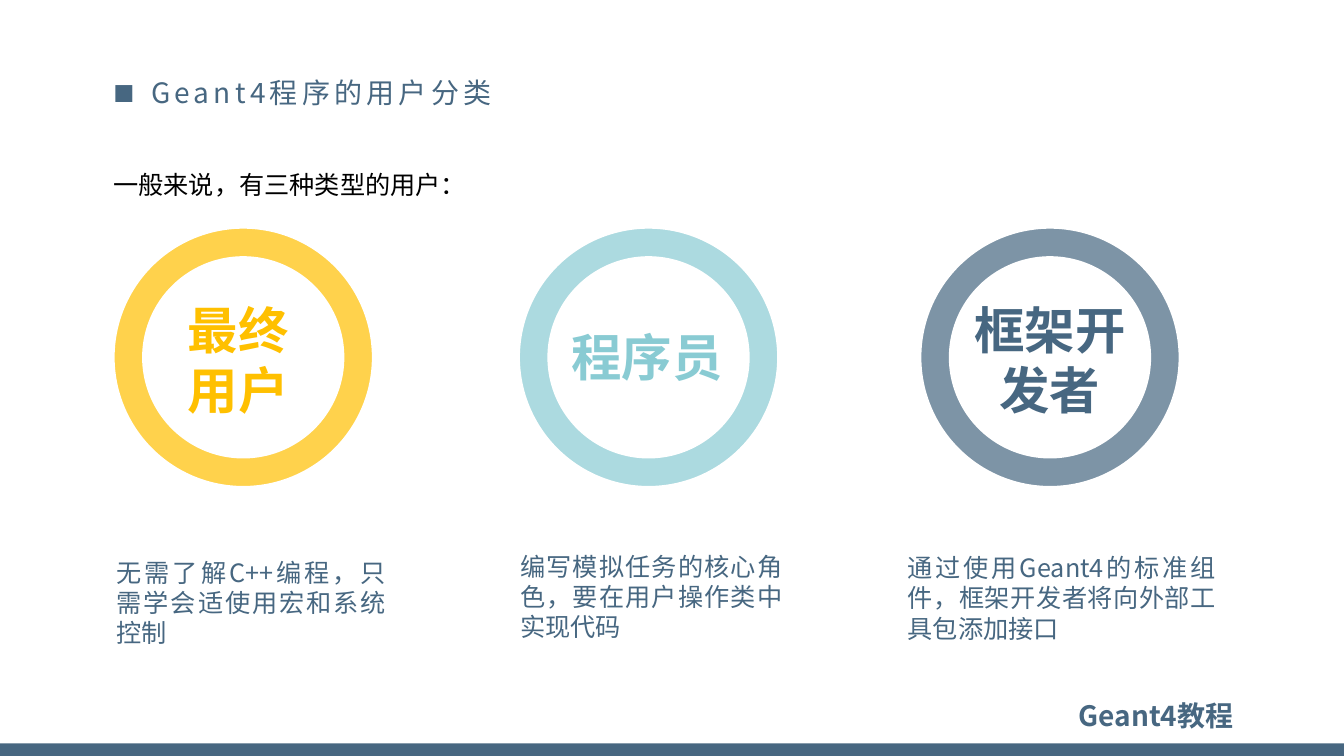
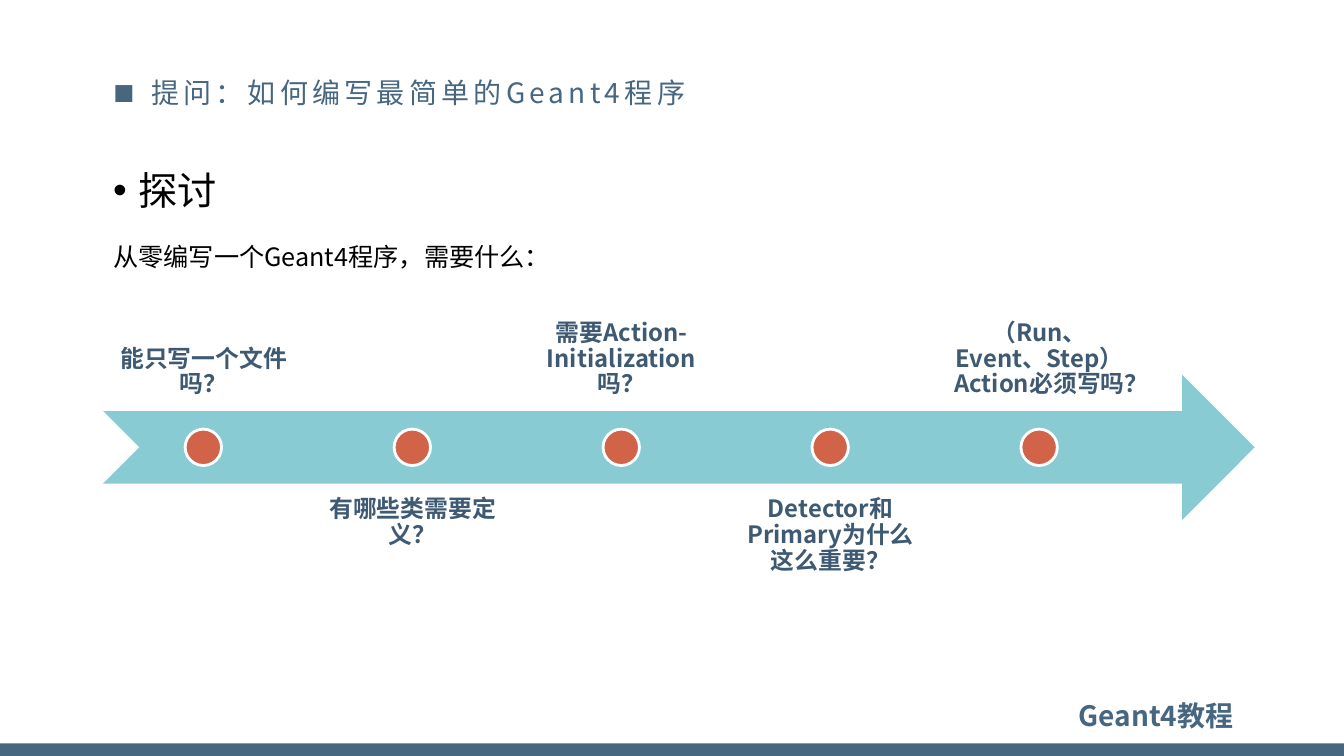
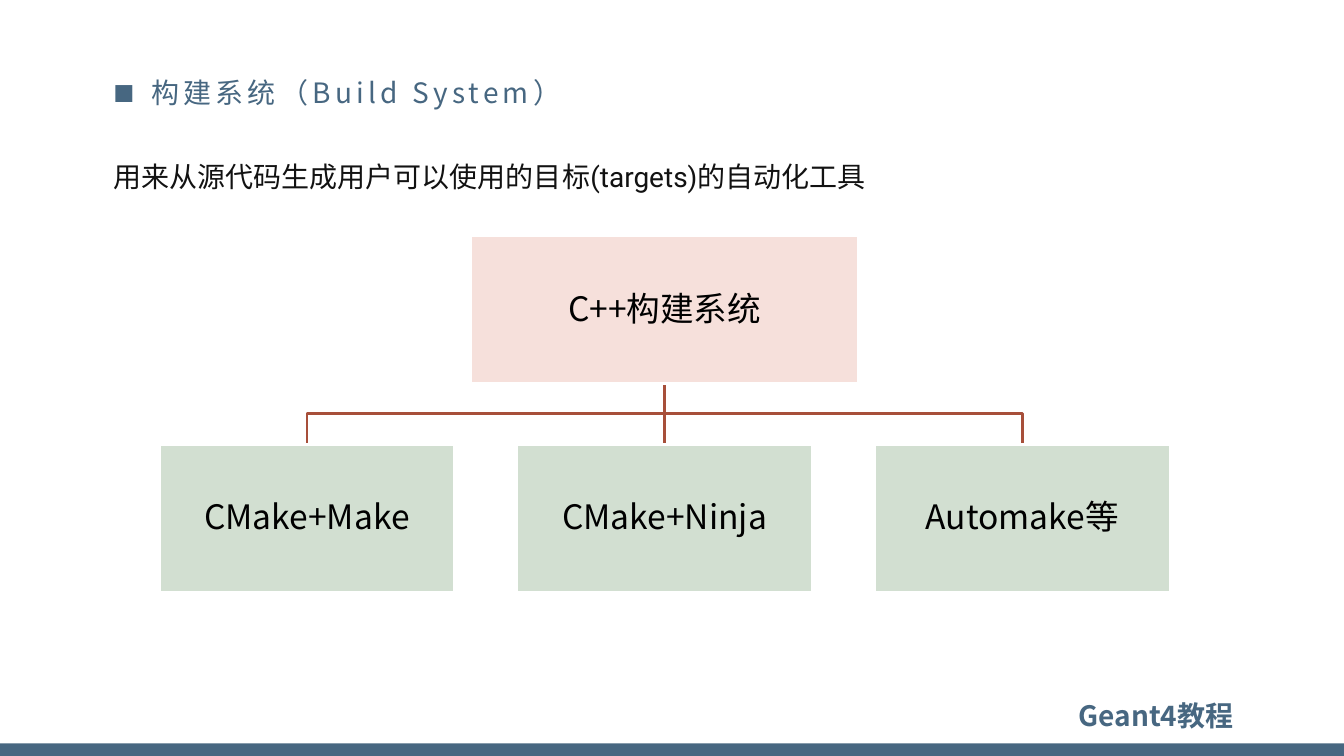
"""Build three slides of a Geant4 tutorial: user types, open questions, build systems."""
from lxml import etree
from pptx import Presentation
from pptx.dml.color import RGBColor
from pptx.enum.shapes import MSO_CONNECTOR, MSO_SHAPE
from pptx.enum.text import MSO_ANCHOR, MSO_AUTO_SIZE, PP_ALIGN
from pptx.oxml.ns import qn
from pptx.util import Pt

LEFT, CENTER, RIGHT, JUSTIFY = PP_ALIGN.LEFT, PP_ALIGN.CENTER, PP_ALIGN.RIGHT, PP_ALIGN.JUSTIFY
TOP, MIDDLE, BOTTOM = MSO_ANCHOR.TOP, MSO_ANCHOR.MIDDLE, MSO_ANCHOR.BOTTOM
RECTANGLE, OVAL, DONUT = MSO_SHAPE.RECTANGLE, MSO_SHAPE.OVAL, MSO_SHAPE.DONUT
NOTCHED_ARROW, STRAIGHT = MSO_SHAPE.NOTCHED_RIGHT_ARROW, MSO_CONNECTOR.STRAIGHT
FONT = "Noto Sans CJK SC"
COLORS = {
    "slate": "476781", "navy": "3E5A72", "gold": "FFC000", "aqua": "89CBD3",
    "rust": "D16349", "brick": "A74F3A", "rose": "F6E0DB", "sage": "D2DFD1",
    "ink": "121212", "black": "000000", "white": "FFFFFF",
}


def write(box, text, size=18, color="black", bold=False, font=FONT, align=LEFT, anchor=TOP,
          leading=1.2, inset=None, bullet=None, bullet_size=100, indent=0, tracking=0):
    """Write one formatted paragraph into a shape."""
    frame = box.text_frame
    frame.word_wrap = True
    frame.auto_size = MSO_AUTO_SIZE.NONE
    frame.vertical_anchor = anchor
    if inset is not None:
        frame.margin_left = frame.margin_right = Pt(inset)
        frame.margin_top = frame.margin_bottom = Pt(inset)
    para = frame.paragraphs[0]
    properties = para._p.get_or_add_pPr()
    properties.set("marL", str(Pt(indent)))
    properties.set("indent", str(-Pt(indent)))
    if bullet:
        etree.SubElement(properties, qn("a:buSzPct")).set("val", str(bullet_size * 1000))
        etree.SubElement(properties, qn("a:buFont")).set("typeface", "Arial")
        etree.SubElement(properties, qn("a:buChar")).set("char", bullet)
    else:
        etree.SubElement(properties, qn("a:buNone"))
    para.alignment = align
    para.line_spacing = Pt(round(size * leading, 1))
    para.space_before = Pt(0)
    span = para.add_run()
    span.text = text
    span.font.size = Pt(size)
    span.font.bold = bold
    span.font.color.rgb = RGBColor.from_string(COLORS[color])
    span.font.name = font
    run_properties = span._r.get_or_add_rPr()
    etree.SubElement(run_properties, qn("a:ea")).set("typeface", FONT)
    if tracking:
        run_properties.set("spc", str(tracking * 100))


def add_block(page, kind, left, top, width, height, fill, line_width=0):
    """Add a filled shape, with a white outline when a line width is given."""
    block = page.shapes.add_shape(kind, Pt(left), Pt(top), Pt(width), Pt(height))
    block.shadow.inherit = False
    block.fill.solid()
    block.fill.fore_color.rgb = RGBColor.from_string(COLORS[fill])
    if line_width:
        block.line.color.rgb = RGBColor.from_string(COLORS["white"])
        block.line.width = Pt(line_width)
    else:
        block.line.fill.background()
    return block


deck = Presentation()
deck.slide_width, deck.slide_height = Pt(960), Pt(540)
layout = deck.slide_layouts[1]
for holder in list(layout.placeholders):
    if holder.placeholder_format.idx >= 10:
        layout.shapes.element.remove(holder.element)
title = layout.placeholders[0]
title.left, title.top, title.width, title.height = Pt(73.75), Pt(44), Pt(803), Pt(46)

openings = [
    ("Geant4程序的用户分类", "一般来说，有三种类型的用户：", (119.5, 803, 343),
     {"leading": 1.08}),
    ("提问：如何编写最简单的Geant4程序", "从零编写一个Geant4程序，需要什么：", (171, 803, 292),
     {"leading": 1.08}),
    ("构建系统（Build System）", "用来从源代码生成用户可以使用的目标(targets)的自动化工具",
     (111, 554.5, 55), {"size": 20, "color": "ink", "font": "Roboto", "leading": 1.18}),
]
pages = []
for heading, intro, (top, width, height), style in openings:
    page = deck.slides.add_slide(layout)
    write(page.shapes.title, heading, size=20, color="slate", anchor=MIDDLE, leading=1.08,
          bullet="■", bullet_size=125, indent=27, tracking=3)
    body = page.placeholders[1]
    body.left, body.top, body.width, body.height = Pt(73.75), Pt(top), Pt(width), Pt(height)
    write(body, intro, **style)
    pages.append(page)
users_page, questions_page, build_page = pages

band = add_block(users_page, RECTANGLE, 0, 531, 960, 9, "slate")
footer = users_page.shapes.add_textbox(Pt(685.75), Pt(495.5), Pt(202.5), Pt(31.5))
write(footer, "Geant4教程", size=20, color="slate", bold=True, align=RIGHT)
for shared in (band, footer):
    layout.shapes.element.append(shared.element)

RING_TOP, RING_SIZE = 162, 186.5
users = [
    ("最终用户", "gold", 80.5, (119.5, 163.5, 101),
     "无需了解C++编程，只需学会适使用宏和系统控制", (76.25, 394.5, 206.5)),
    ("程序员", "aqua", 370, (399.75, 161, 125),
     "编写模拟任务的核心角色，要在用户操作类中实现代码", (364.5, 390, 201.5)),
    ("框架开发者", "slate", 656.75, (687.5, 163.5, 125),
     "通过使用Geant4的标准组件，框架开发者将向外部工具包添加接口", (641.25, 391, 234.5)),
]
for name, color, ring_left, (name_left, name_top, name_width), duty, (left, top, width) in users:
    ring = add_block(users_page, DONUT, ring_left, RING_TOP, RING_SIZE, RING_SIZE, color, 2.75)
    ring.adjustments[0] = 0.12
    tint = ring.element.spPr.find(qn("a:solidFill"))[0]
    etree.SubElement(tint, qn("a:alpha")).set("val", "70000")
    label = users_page.shapes.add_textbox(Pt(name_left), Pt(name_top), Pt(name_width), Pt(RING_SIZE))
    write(label, name, size=36, color=color, bold=True, align=CENTER, anchor=MIDDLE)
    description = users_page.shapes.add_textbox(Pt(left), Pt(top), Pt(width), Pt(73))
    write(description, duty, color="slate", align=JUSTIFY)

topic = questions_page.shapes.add_textbox(Pt(73.75), Pt(98.75), Pt(637), Pt(40))
write(topic, "探讨", size=28, align=JUSTIFY, leading=1.8, bullet="•", indent=18)
add_block(questions_page, NOTCHED_ARROW, 73.75, 267.75, 822.5, 103.5, "aqua")
questions = [
    "能只写一个文件吗？",
    "有哪些类需要定义？",
    "需要Action-Initialization吗？",
    "Detector和Primary为什么这么重要？",
    "（Run、Event、Step）Action必须写吗？",
]
for index, question in enumerate(questions):
    shift = index * 149.25
    above = index % 2 == 0
    label = questions_page.shapes.add_textbox(
        Pt(74.25 + shift), Pt(190 if above else 345.5), Pt(142.5), Pt(103.5))
    write(label, question, size=17, color="navy", bold=True, align=CENTER,
          anchor=BOTTOM if above else TOP, leading=1.08, inset=9.4)
    add_block(questions_page, OVAL, 132.25 + shift, 306.5, 26, 26, "rust", 2)

ROOT_TOP, TOOL_TOP, TOOL_WIDTH, BOX_HEIGHT = 168.5, 317.5, 211, 105.5
TOOL_LEFT, TOOL_STEP, ROOT_WIDTH = 113.75, 255.5, 276.5
BUS_TOP, ROOT_BOTTOM = 295.25, ROOT_TOP + BOX_HEIGHT
trunk = TOOL_LEFT + TOOL_STEP + TOOL_WIDTH / 2
links = []
for end in (trunk + TOOL_STEP, trunk - TOOL_STEP):
    outline = build_page.shapes.build_freeform(Pt(trunk), Pt(ROOT_BOTTOM))
    corners = [(trunk, BUS_TOP), (end, BUS_TOP), (end, TOOL_TOP)]
    outline.add_line_segments([(Pt(x), Pt(y)) for x, y in corners], close=False)
    branch = outline.convert_to_shape()
    branch.shadow.inherit = False
    branch.fill.background()
    links.append(branch)
stem = build_page.shapes.add_connector(STRAIGHT, Pt(trunk), Pt(ROOT_BOTTOM), Pt(trunk), Pt(TOOL_TOP))
links.append(stem)
for link in links:
    link.line.color.rgb = RGBColor.from_string(COLORS["brick"])
    link.line.width = Pt(2)
etree.SubElement(stem.element.spPr, qn("a:effectLst"))

nodes = [("C++构建系统", trunk - ROOT_WIDTH / 2, ROOT_TOP, ROOT_WIDTH, "rose")]
for index, tool in enumerate(["CMake+Make", "CMake+Ninja", "Automake等"]):
    nodes.append((tool, TOOL_LEFT + index * TOOL_STEP, TOOL_TOP, TOOL_WIDTH, "sage"))
boxes = []
for name, left, top, width, fill in nodes:
    box = add_block(build_page, RECTANGLE, left, top, width, BOX_HEIGHT, fill, 2)
    write(box, name, size=24, align=CENTER, anchor=MIDDLE, leading=1.08, inset=1.5)
    boxes.append(box)
stem.begin_connect(boxes[0], 2)
stem.end_connect(boxes[2], 0)

deck.save("out.pptx")
